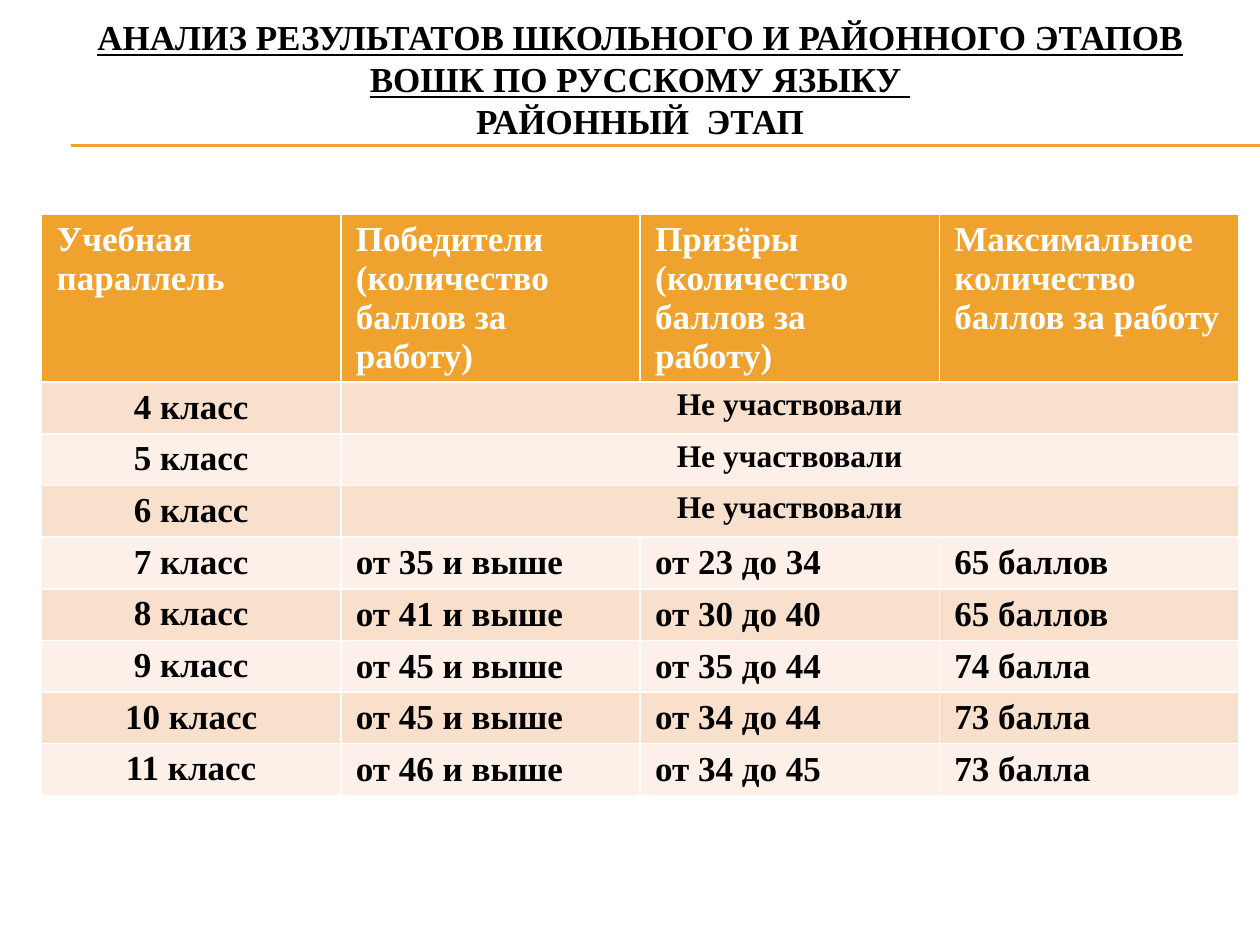
from dataclasses import dataclass
from typing import Any, NamedTuple

from lxml import etree
from pptx import Presentation
from pptx.dml.color import RGBColor
from pptx.enum import shapes, text
from pptx.oxml import ns
from pptx.util import Inches, Pt


@dataclass(frozen=True)
class Theme:
    font: str = "Times New Roman"
    black: str = "000000"
    white: str = "FFFFFF"
    gold: str = "F0A22E"
    bands: tuple[str, str] = ("F9E0CD", "FCF0E8")
    large: float = 20
    small: float = 18
    rule: float = 0.75


class Grade(NamedTuple):
    name: str
    scores: tuple[str, ...] = ()


THEME = Theme()
CENTER = text.PP_ALIGN.CENTER
LEFT, WIDTH = 0.33, 9.5
ROW = 0.41
ABSENT = "Не участвовали"
HEADS = [
    ("Учебная параллель",),
    ("Победители", "(количество баллов за работу)"),
    ("Призёры", "(количество баллов за работу)"),
    ("Максимальное количество баллов за работу",),
]
GRADES = [
    Grade("4 класс"),
    Grade("5 класс"),
    Grade("6 класс"),
    Grade("7 класс", ("от 35 и выше", "от 23 до 34", "65 баллов")),
    Grade("8 класс", ("от 41 и выше", "от 30 до 40", "65 баллов")),
    Grade("9 класс", ("от 45 и выше", "от 35 до 44", "74 балла")),
    Grade("10 класс", ("от 45 и выше", "от 34 до 44", "73 балла")),
    Grade("11 класс", ("от 46 и выше", "от 34 до 45", "73 балла")),
]


def write(para: Any, words: str, *, size: float = THEME.large,
          color: str = THEME.black, line: bool = False,
          align: Any = None, space: float | None = None) -> None:
    if align is not None:
        para.alignment = align
    if space is not None:
        para.line_spacing = space
    run = para.add_run()
    run.text = words
    font = run.font
    font.name, font.size = THEME.font, Pt(size)
    font.bold, font.underline = True, line
    font.color.rgb = RGBColor.from_string(color)


def fill_cell(cell: Any, lines: tuple[str, ...], fill: str,
              pad: tuple[float, float] = (0.12, 0.05), **style: Any) -> None:
    cell.fill.solid()
    cell.fill.fore_color.rgb = RGBColor.from_string(fill)
    cell.margin_left = cell.margin_right = Inches(pad[0])
    cell.margin_top = cell.margin_bottom = Inches(pad[1])
    frame = cell.text_frame
    for i, words in enumerate(lines):
        para = frame.add_paragraph() if i else frame.paragraphs[0]
        write(para, words, **style)


def draw_rule(slide: Any, top: float) -> None:
    rule = slide.shapes.add_connector(
        shapes.MSO_CONNECTOR.STRAIGHT,
        Inches(0.56), Inches(top), Inches(10), Inches(top))
    rule.line.color.rgb = RGBColor.from_string(THEME.gold)
    rule.line.width = Pt(THEME.rule)
    etree.SubElement(rule._element.spPr, ns.qn("a:effectLst"))


def draw_title(slide: Any) -> None:
    title = slide.shapes.title
    title.left, title.top = Inches(LEFT), Inches(0)
    title.width, title.height = Inches(WIDTH), Inches(1.25)
    frame = title.text_frame
    frame.word_wrap = True
    frame.auto_size = text.MSO_AUTO_SIZE.NONE
    frame.vertical_anchor = text.MSO_ANCHOR.MIDDLE
    para = frame.paragraphs[0]
    write(para, "АНАЛИЗ РЕЗУЛЬТАТОВ ШКОЛЬНОГО И РАЙОННОГО ЭТАПОВ "
          "ВОШК ПО РУССКОМУ ЯЗЫКУ ", line=True, align=CENTER)
    para.add_line_break()
    write(para, "РАЙОННЫЙ  ЭТАП")


def draw_table(slide: Any) -> None:
    count = len(GRADES) + 1
    table = slide.shapes.add_table(
        count, len(HEADS), Inches(LEFT), Inches(1.7),
        Inches(WIDTH), Inches(ROW * count)).table
    for col, lines in enumerate(HEADS):
        fill_cell(table.cell(0, col), lines, THEME.gold, color=THEME.white)
    label = {"pad": (0.09, 0), "align": CENTER, "space": 1.15}
    for row, grade in enumerate(GRADES, 1):
        band = THEME.bands[(row - 1) % 2]
        fill_cell(table.cell(row, 0), (grade.name,), band, **label)
        if not grade.scores:
            wide = table.cell(row, 1)
            wide.merge(table.cell(row, len(HEADS) - 1))
            fill_cell(wide, (ABSENT,), band, size=THEME.small, **label)
        for col, score in enumerate(grade.scores, 1):
            fill_cell(table.cell(row, col), (score,), band)


def main() -> None:
    deck = Presentation()
    deck.slide_width, deck.slide_height = Inches(10), Inches(7.5)
    slide = deck.slides.add_slide(deck.slide_layouts[5])
    for top in (1.15, 1.16):
        draw_rule(slide, top)
    draw_title(slide)
    draw_table(slide)
    deck.save("out.pptx")


if __name__ == "__main__":
    main()
